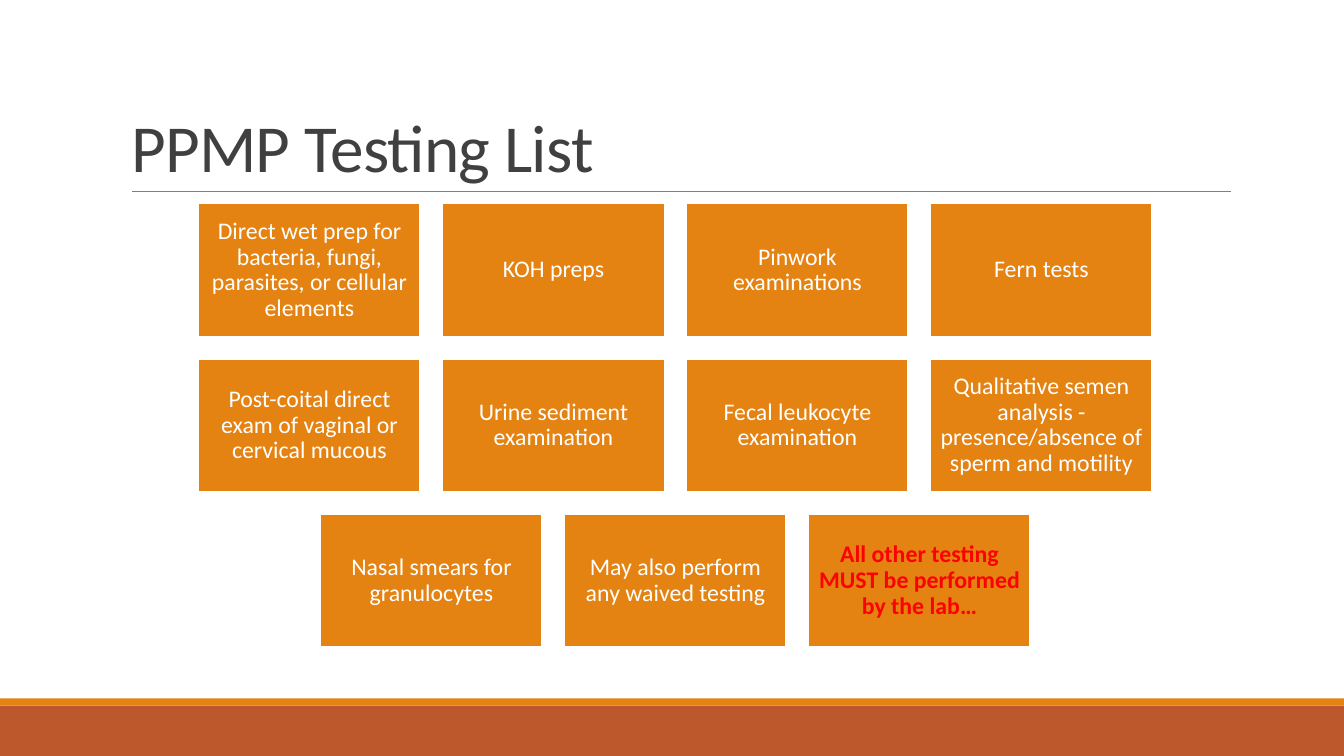
from typing import NamedTuple

from lxml.etree import SubElement
from pptx import Presentation
from pptx.dml.color import RGBColor
from pptx.enum.shapes import MSO_CONNECTOR, MSO_SHAPE
from pptx.enum.text import MSO_ANCHOR as Anchor, MSO_AUTO_SIZE, PP_ALIGN as Align
from pptx.oxml.ns import qn
from pptx.shapes.autoshape import Shape
from pptx.slide import Slide
from pptx.text.text import _Paragraph as Paragraph, _Run as Run
from pptx.util import Inches, Pt

FONT = "Calibri"
ORANGE, RUST, WHITE, RED = "E48312", "BD582C", "FFFFFF", "FF0000"
CARD_W, CARD_H, GAP = 2.2, 1.32, 0.22
GRID_CENTER, GRID_TOP = 6.7, 2.02


class Band(NamedTuple):
    top: float
    height: float
    color: str


class Card(NamedTuple):
    text: str
    color: str = WHITE
    bold: bool = False


BANDS = [Band(7, 0.5, RUST), Band(6.93, 0.07, ORANGE)]
CARD_ROWS = [
    [
        Card("Direct wet prep for bacteria, fungi, parasites, or cellular elements"),
        Card("KOH preps"),
        Card("Pinwork examinations"),
        Card("Fern tests"),
    ],
    [
        Card("Post-coital direct exam of vaginal or cervical mucous"),
        Card("Urine sediment examination"),
        Card("Fecal leukocyte examination"),
        Card("Qualitative semen analysis - presence/absence of sperm and motility"),
    ],
    [
        Card("Nasal smears for granulocytes"),
        Card("May also perform any waived testing"),
        Card("All other testing MUST be performed by the lab…", RED, True),
    ],
]


def rgb(color: str) -> RGBColor:
    return RGBColor.from_string(color)


def add_run(p: Paragraph, text: str, size: float, color: str, bold: bool = False) -> Run:
    r = p.add_run()
    r.text = text
    r.font.name = FONT
    r.font.size = Pt(size)
    r.font.bold = bold
    r.font.color.rgb = rgb(color)
    return r


def add_rect(s: Slide, left: float, top: float, width: float, height: float, fill: str) -> Shape:
    sp = s.shapes.add_shape(
        MSO_SHAPE.RECTANGLE, Inches(left), Inches(top), Inches(width), Inches(height)
    )
    sp.shadow.inherit = False
    sp.fill.solid()
    sp.fill.fore_color.rgb = rgb(fill)
    sp.line.fill.background()
    return sp


def add_card(s: Slide, card: Card, left: float, top: float) -> None:
    sp = add_rect(s, left, top, CARD_W, CARD_H, ORANGE)
    sp.line.color.rgb = rgb(WHITE)
    sp.line.width = Pt(1.25)
    tf = sp.text_frame
    tf.word_wrap = True
    tf.vertical_anchor = Anchor.MIDDLE
    tf.margin_left = tf.margin_right = tf.margin_top = tf.margin_bottom = Inches(0.07)
    p = tf.paragraphs[0]
    p.alignment = Align.CENTER
    p.line_spacing = 0.9
    add_run(p, card.text, 17, card.color, card.bold)


def add_title(s: Slide, text: str) -> None:
    sp = s.shapes.title
    sp.left, sp.top, sp.width, sp.height = Inches(1.2), Inches(0.31), Inches(11), Inches(1.59)
    tf = sp.text_frame
    tf.auto_size = MSO_AUTO_SIZE.NONE
    tf.vertical_anchor = Anchor.BOTTOM
    p = tf.paragraphs[0]
    p.alignment = Align.LEFT
    p.line_spacing = 0.85
    r = add_run(p, text, 48, "404040")
    r.font._element.set("spc", "-50")


def add_rule(s: Slide, left: float, right: float, y: float) -> None:
    line = s.shapes.add_connector(
        MSO_CONNECTOR.STRAIGHT, Inches(left), Inches(y), Inches(right), Inches(y)
    )
    line.line.color.rgb = rgb("808080")
    line.line.width = Pt(0.5)
    SubElement(line._element.spPr, qn("a:effectLst"))


def main() -> None:
    prs = Presentation()
    prs.slide_width, prs.slide_height = Inches(13.33), Inches(7.5)
    s = prs.slides.add_slide(prs.slide_layouts[5])
    for band in BANDS:
        add_rect(s, 0, band.top, 13.33, band.height, band.color)
    add_rule(s, 1.31, 12.21, 1.9)
    add_title(s, "PPMP Testing List")
    for i, row in enumerate(CARD_ROWS):
        row_width = len(row) * (CARD_W + GAP) - GAP
        row_left = GRID_CENTER - row_width / 2
        for j, card in enumerate(row):
            add_card(s, card, row_left + j * (CARD_W + GAP), GRID_TOP + i * (CARD_H + GAP))
    prs.save("out.pptx")


if __name__ == "__main__":
    main()
